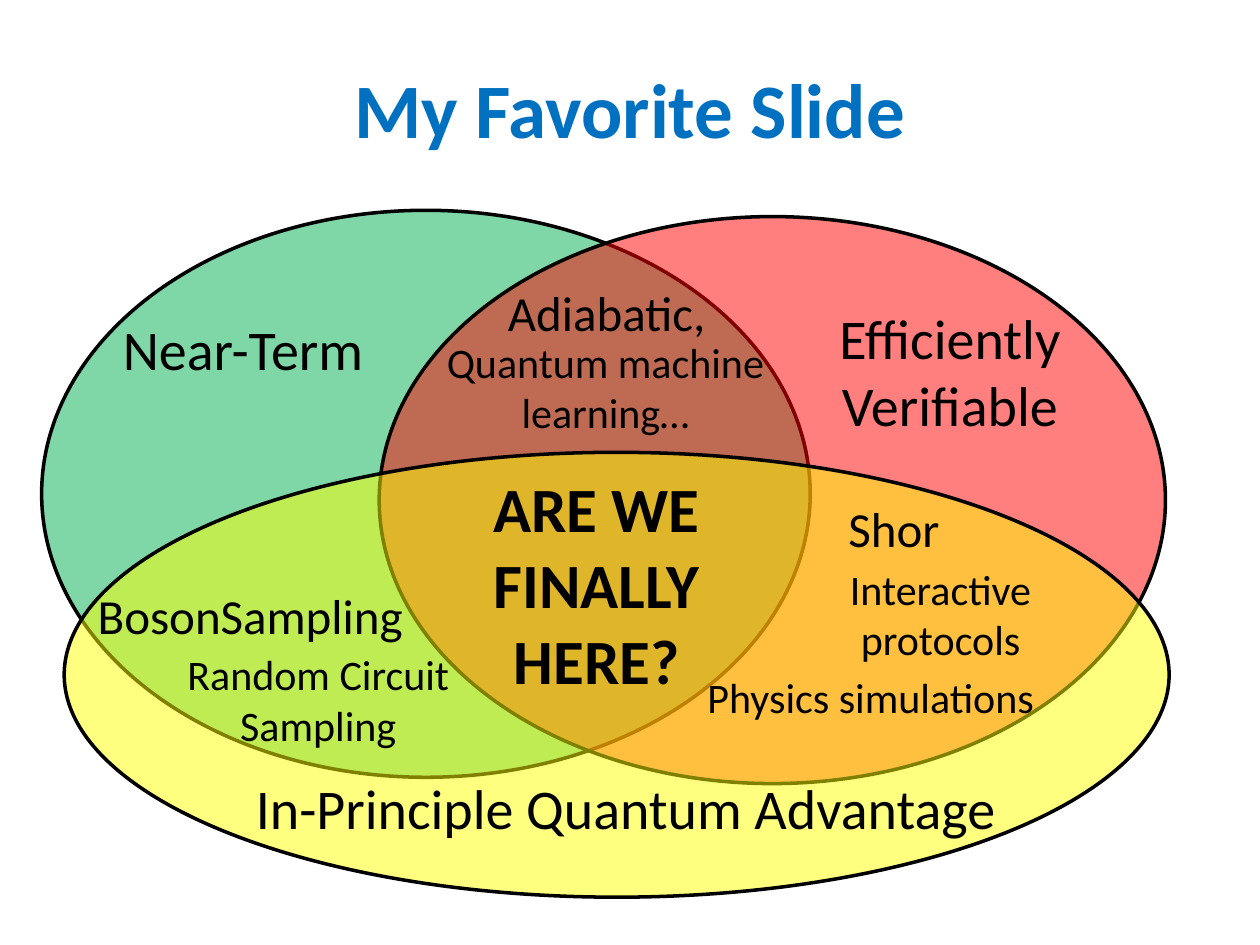
from dataclasses import dataclass

from lxml.etree import SubElement
from pptx import Presentation
from pptx.dml.color import RGBColor
from pptx.enum.shapes import MSO_SHAPE
from pptx.enum.text import MSO_ANCHOR, MSO_AUTO_SIZE, PP_ALIGN
from pptx.oxml.ns import qn
from pptx.util import Pt


@dataclass(frozen=True)
class Theme:
    font: str = "Calibri"
    title_color: str = "0070C0"
    ink: str = "000000"
    near_term: str = "00B050"
    verifiable: str = "FF0000"
    advantage: str = "FFFF00"
    opacity: int = 50
    outline: float = 2
    title: int = 44
    question: int = 36
    region: int = 32
    example: int = 28
    detail: int = 24


@dataclass(frozen=True)
class Box:
    left: float
    top: float
    width: float
    height: float

    def lengths(self) -> tuple:
        return Pt(self.left), Pt(self.top), Pt(self.width), Pt(self.height)


@dataclass(frozen=True)
class Region:
    box: Box
    color: str


@dataclass(frozen=True)
class Label:
    lines: tuple
    box: Box
    size: int
    bold: bool = False


THEME = Theme()

REGIONS = [
    Region(Box(23.8, 120.2, 439.2, 324), THEME.near_term),
    Region(Box(216.7, 123.8, 449.3, 324), THEME.verifiable),
    Region(Box(36.7, 258.5, 631.4, 254.2), THEME.advantage),
]

LABELS = [
    # Names of the three regions
    Label(("Near-Term",), Box(28.8, 176.4, 220.3, 46), THEME.region),
    Label(("Efficiently", "Verifiable"), Box(463.7, 169.9, 158.4, 85), THEME.region),
    Label(("In-Principle Quantum Advantage",), Box(133.2, 438.5, 449.3, 46), THEME.region),
    # Verifiable and advantage
    Label(("Interactive protocols",), Box(465.1, 318.2, 144.7, 65.5), THEME.detail),
    Label(("Shor",), Box(438.5, 281.5, 144.7, 41), THEME.example),
    Label(("Physics simulations",), Box(387.4, 380.2, 220.3, 36.7), THEME.detail),
    # Near-term and verifiable
    Label(("Adiabatic,",), Box(274.3, 157.7, 144.7, 41), THEME.example),
    Label(("Quantum machine learning…",), Box(223.9, 188.6, 244.1, 65.5), THEME.detail),
    # Near-term and advantage
    Label(("BosonSampling",), Box(42.5, 331.2, 200.9, 41), THEME.example),
    Label(("Random Circuit Sampling",), Box(81.4, 367.2, 200.9, 65.5), THEME.detail),
    # All three
    Label(("ARE WE FINALLY HERE?",), Box(240.5, 265, 200.9, 138.2), THEME.question, True),
]


def write(tf, lines: tuple, size: int, color: str, bold: bool) -> None:
    formats = {"name": THEME.font, "size": Pt(size), "bold": bold}
    tf.word_wrap = True
    for i, line in enumerate(lines):
        p = tf.add_paragraph() if i else tf.paragraphs[0]
        p.alignment = PP_ALIGN.CENTER
        r = p.add_run()
        r.text = line
        for name, value in formats.items():
            setattr(r.font, name, value)
        r.font.color.rgb = RGBColor.from_string(color)


def add_title(s, text: str, box: Box) -> None:
    sp = s.shapes.title
    sp.left, sp.top, sp.width, sp.height = box.lengths()
    tf = sp.text_frame
    tf.vertical_anchor = MSO_ANCHOR.MIDDLE
    write(tf, (text,), THEME.title, THEME.title_color, True)


def add_region(s, region: Region) -> None:
    sp = s.shapes.add_shape(MSO_SHAPE.OVAL, *region.box.lengths())
    sp.shadow.inherit = False
    sp.fill.solid()
    sp.fill.fore_color.rgb = RGBColor.from_string(region.color)
    color = sp.fill._xPr.find(qn("a:solidFill"))[0]
    SubElement(color, qn("a:alpha"), val=str(THEME.opacity * 1000))
    sp.line.color.rgb = RGBColor.from_string(THEME.ink)
    sp.line.width = Pt(THEME.outline)


def add_label(s, label: Label) -> None:
    tf = s.shapes.add_textbox(*label.box.lengths()).text_frame
    write(tf, label.lines, label.size, THEME.ink, label.bold)
    tf.auto_size = MSO_AUTO_SIZE.SHAPE_TO_FIT_TEXT


def main() -> None:
    prs = Presentation()
    prs.slide_width, prs.slide_height = Pt(720), Pt(540)
    s = prs.slides.add_slide(prs.slide_layouts.get_by_name("Title Only"))

    add_title(s, "My Favorite Slide", Box(15.1, 28.1, 689.8, 67))
    # Overlapping regions first, labels on top
    for region in REGIONS:
        add_region(s, region)
    for label in LABELS:
        add_label(s, label)

    prs.save("out.pptx")


if __name__ == "__main__":
    main()
